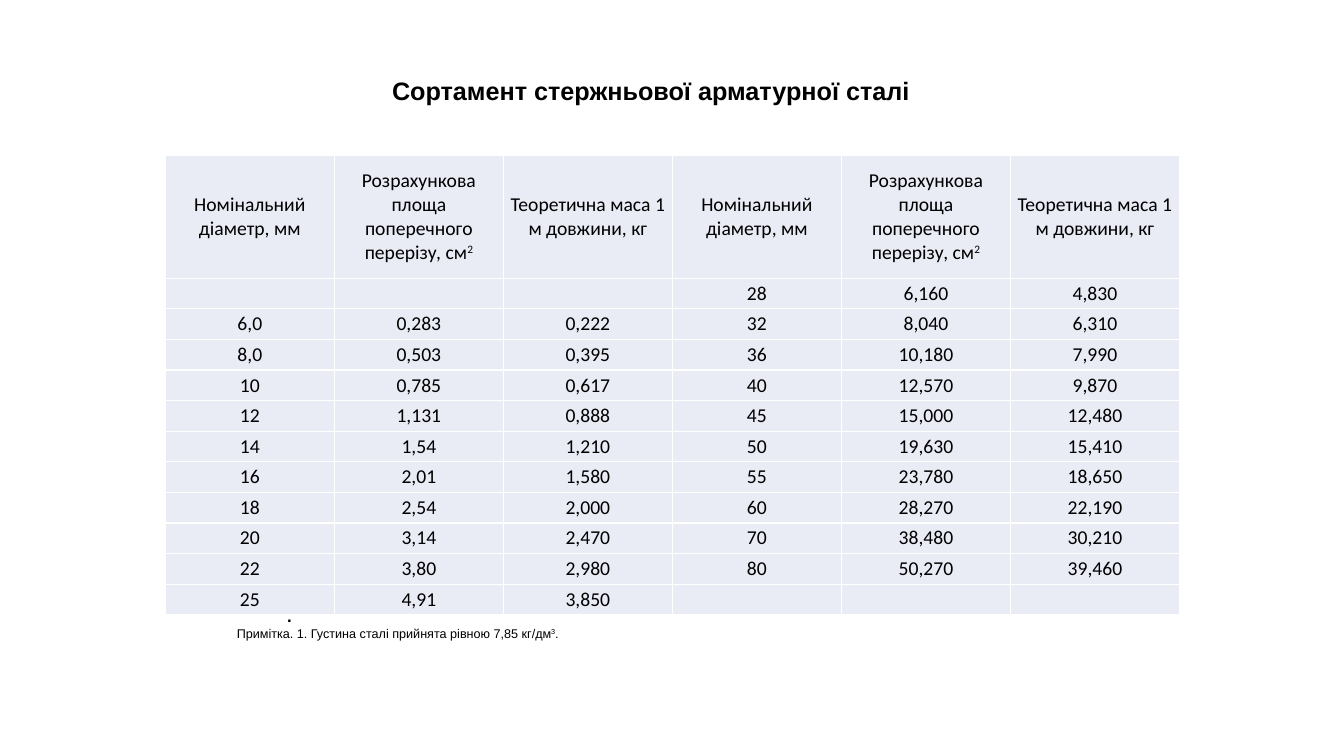
from lxml.etree import SubElement
from pptx import Presentation
from pptx.dml.color import RGBColor
from pptx.enum.text import MSO_ANCHOR as ANCHOR, MSO_AUTO_SIZE as AUTO, PP_ALIGN as ALIGN
from pptx.oxml.ns import qn
from pptx.util import Inches, Pt

BLACK = RGBColor(0x00, 0x00, 0x00)
WHITE = RGBColor(0xFF, 0xFF, 0xFF)
CELL_FILL = RGBColor(0xE9, 0xEB, 0xF5)
SUPERSCRIPT = "30000"
CELL_SIZE = 14
HEADER_HEIGHT = 1.22

TITLE = "Сортамент стержньової арматурної сталі"
HEADERS = [
    ("Номінальний діаметр, мм", ""),
    ("Розрахункова площа поперечного перерізу, см", "2"),
    ("Теоретична маса 1 м довжини, кг", ""),
]
EMPTY = ("", "", "")
SMALL_BARS = [
    EMPTY,
    ("6,0", "0,283", "0,222"),
    ("8,0", "0,503", "0,395"),
    ("10", "0,785", "0,617"),
    ("12", "1,131", "0,888"),
    ("14", "1,54", "1,210"),
    ("16", "2,01", "1,580"),
    ("18", "2,54", "2,000"),
    ("20", "3,14", "2,470"),
    ("22", "3,80", "2,980"),
    ("25", "4,91", "3,850"),
]
LARGE_BARS = [
    ("28", "6,160", "4,830"),
    ("32", "8,040", "6,310"),
    ("36", "10,180", "7,990"),
    ("40", "12,570", "9,870"),
    ("45", "15,000", "12,480"),
    ("50", "19,630", "15,410"),
    ("55", "23,780", "18,650"),
    ("60", "28,270", "22,190"),
    ("70", "38,480", "30,210"),
    ("80", "50,270", "39,460"),
    EMPTY,
]


def add_run(p, text, size, font, bold=False, raised=False):
    r = p.add_run()
    r.text = text
    r.font.size = Pt(size)
    r.font.name = font
    r.font.bold = bold
    r.font.color.rgb = BLACK
    if raised:
        r.font._element.set("baseline", SUPERSCRIPT)


def add_text_box(s, x, y, w, h):
    """Add a non-wrapping text box and return its text frame."""
    tf = s.shapes.add_textbox(Inches(x), Inches(y), Inches(w), Inches(h)).text_frame
    tf.word_wrap = False
    tf.auto_size = AUTO.SHAPE_TO_FIT_TEXT
    return tf


def add_title(s, x, y, w, h):
    tf = add_text_box(s, x, y, w, h)
    add_run(tf.paragraphs[0], TITLE, 18, "Arial", bold=True)


def add_borders(cell):
    """Draw thin white lines on all four sides, placed ahead of the fill."""
    props = cell._tc.get_or_add_tcPr()
    for i, side in enumerate(("lnL", "lnR", "lnT", "lnB")):
        line = SubElement(props, qn(f"a:{side}"), w=str(Pt(1)))
        props.insert(i, line)
        fill = SubElement(line, qn("a:solidFill"))
        SubElement(fill, qn("a:srgbClr"), val=str(WHITE))


def fill_cell(cell, text, power=""):
    cell.fill.solid()
    cell.fill.fore_color.rgb = CELL_FILL
    add_borders(cell)
    cell.vertical_anchor = ANCHOR.MIDDLE
    cell.margin_left = cell.margin_right = Inches(0.06)
    cell.margin_top = cell.margin_bottom = 0
    p = cell.text_frame.paragraphs[0]
    p.alignment = ALIGN.CENTER
    if text:
        add_run(p, text, CELL_SIZE, "Calibri")
    else:
        SubElement(p._p, qn("a:endParaRPr"), sz=str(CELL_SIZE * 100))
    if power:
        add_run(p, power, CELL_SIZE, "Calibri", raised=True)


def add_bar_table(s, x, y, w, h):
    rows = [small + large for small, large in zip(SMALL_BARS, LARGE_BARS)]
    headers = HEADERS * 2
    table = s.shapes.add_table(len(rows) + 1, len(headers), Inches(x), Inches(y),
                               Inches(w), Inches(h)).table
    table.first_row = table.horz_banding = False
    for col in table.columns:
        col.width = Inches(w / len(headers))
    for row in table.rows:
        row.height = Inches((h - HEADER_HEIGHT) / len(rows))
    table.rows[0].height = Inches(HEADER_HEIGHT)
    for j, (text, power) in enumerate(headers):
        fill_cell(table.cell(0, j), text, power)
    for i, values in enumerate(rows, start=1):
        for j, value in enumerate(values):
            fill_cell(table.cell(i, j), value)


def add_note(s, x, y, w, h):
    tf = add_text_box(s, x, y, w, h)
    tf.vertical_anchor = ANCHOR.MIDDLE
    dot, note = tf.paragraphs[0], tf.add_paragraph()
    for p in (dot, note):
        p.alignment = ALIGN.JUSTIFY
    dot._p.get_or_add_pPr().set("indent", str(Inches(0.5)))
    add_run(dot, ".", 12, "Arial", bold=True)
    add_run(note, "Примітка. 1. Густина сталі прийнята рівною 7,85 кг/дм", 9, "Arial")
    add_run(note, "3", 9, "Arial", raised=True)
    add_run(note, ".", 9, "Arial")


def main():
    prs = Presentation()
    prs.slide_width, prs.slide_height = Inches(13.33), Inches(7.5)
    s = prs.slides.add_slide(prs.slide_layouts[6])
    add_bar_table(s, 1.64, 1.54, 10.06, 4.56)
    add_note(s, 2.25, 5.96, 3.45, 0.45)
    add_title(s, 3.79, 0.7, 5.4, 0.4)
    prs.save("out.pptx")


if __name__ == "__main__":
    main()
